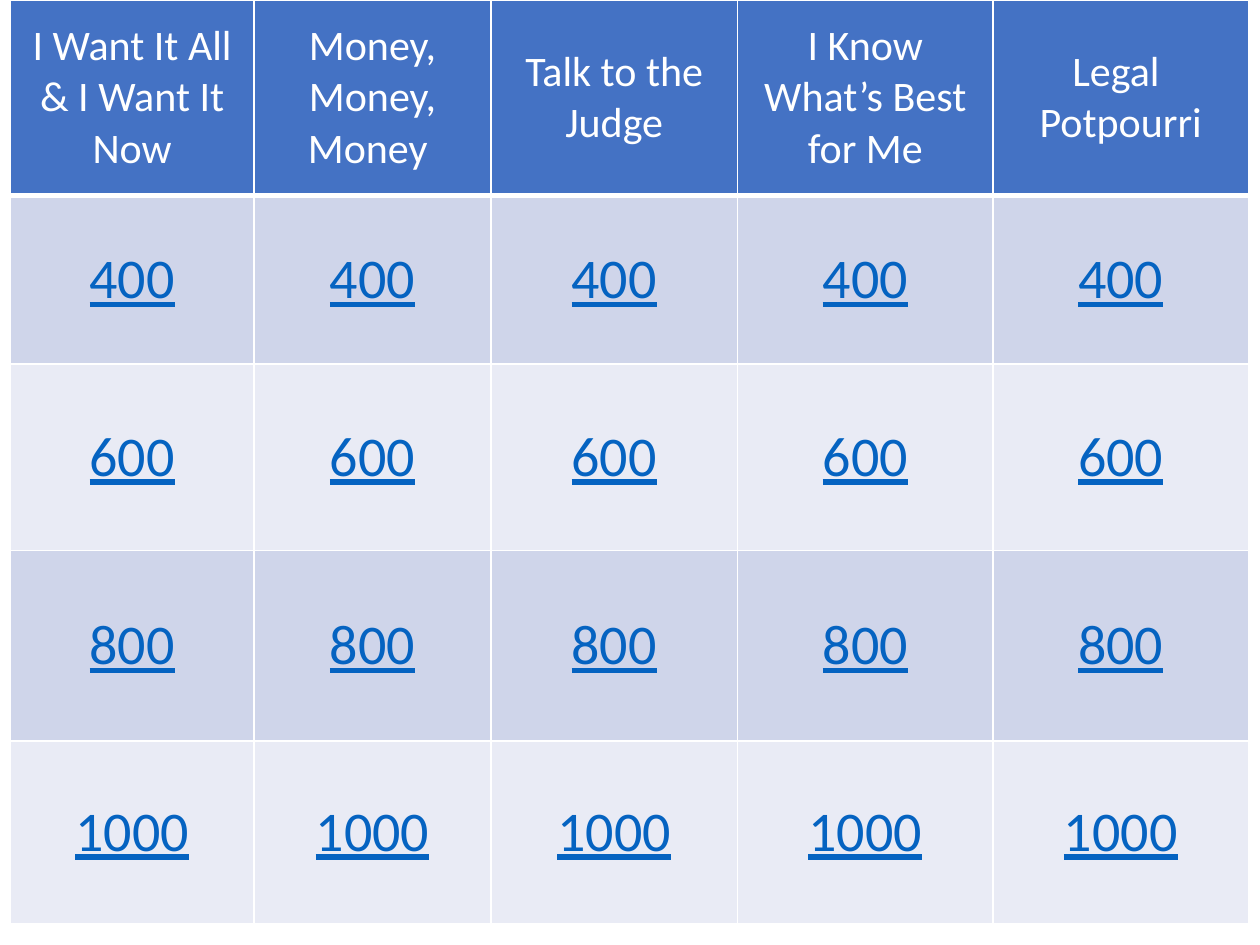
from lxml.etree import SubElement
from pptx import Presentation
from pptx.dml.color import RGBColor
from pptx.enum.text import MSO_ANCHOR, PP_ALIGN
from pptx.oxml.ns import qn
from pptx.util import Inches, Pt

WHITE = RGBColor(0xFF, 0xFF, 0xFF)
HEADER_BLUE = RGBColor(0x44, 0x72, 0xC4)
LINK_BLUE = RGBColor(0x05, 0x63, 0xC1)
BANDS = (RGBColor(0xCF, 0xD5, 0xEA), RGBColor(0xE9, 0xEB, 0xF5))

CATEGORIES = [
    "I Want It All & I Want It Now",
    "Money, Money, Money ",
    "Talk to the Judge",
    "I Know What’s Best for Me",
    "Legal \nPotpourri",
]
POINTS = [400, 600, 800, 1000]
COL_SHARES = [1.94, 1.88, 1.96, 2.03, 2.03]
ROW_SHARES = [1.55, 1.34, 1.48, 1.51, 1.45]


def set_borders(cell, bottom_width):
    tcPr = cell._tc.get_or_add_tcPr()
    widths = {"a:lnL": 1, "a:lnR": 1, "a:lnT": 1, "a:lnB": bottom_width}
    for tag, width in widths.items():
        ln = SubElement(tcPr, qn(tag), w=str(Pt(width)))
        fill = SubElement(ln, qn("a:solidFill"))
        SubElement(fill, qn("a:srgbClr"), val=str(WHITE))


def fill_cell(cell, text, size, color, background, underline=None, bottom_width=1):
    set_borders(cell, bottom_width)
    cell.fill.solid()
    cell.fill.fore_color.rgb = background
    cell.vertical_anchor = MSO_ANCHOR.MIDDLE
    cell.text_frame.text = text
    for p in cell.text_frame.paragraphs:
        p.alignment = PP_ALIGN.CENTER
        for r in p.runs:
            r.font.name = "Calibri"
            r.font.size = Pt(size)
            r.font.bold = False
            r.font.underline = underline
            r.font.color.rgb = color


def add_board(slide, left, top, width, height):
    table = slide.shapes.add_table(
        len(POINTS) + 1, len(CATEGORIES), left, top, width, height
    ).table
    for column, share in zip(table.columns, COL_SHARES):
        column.width = int(width * share / sum(COL_SHARES))
    for row, share in zip(table.rows, ROW_SHARES):
        row.height = int(height * share / sum(ROW_SHARES))
    for col, category in enumerate(CATEGORIES):
        fill_cell(table.cell(0, col), category, 24, WHITE, HEADER_BLUE, bottom_width=3)
        for row, points in enumerate(POINTS):
            fill_cell(table.cell(row + 1, col), str(points), 32, LINK_BLUE,
                      BANDS[row % 2], underline=True)


def main():
    prs = Presentation()
    prs.slide_width, prs.slide_height = Inches(10), Inches(7.5)
    slide = prs.slides.add_slide(prs.slide_layouts[6])
    add_board(slide, Inches(0.08), Inches(0), Inches(9.83), Inches(7.33))
    prs.save("out.pptx")


if __name__ == "__main__":
    main()
